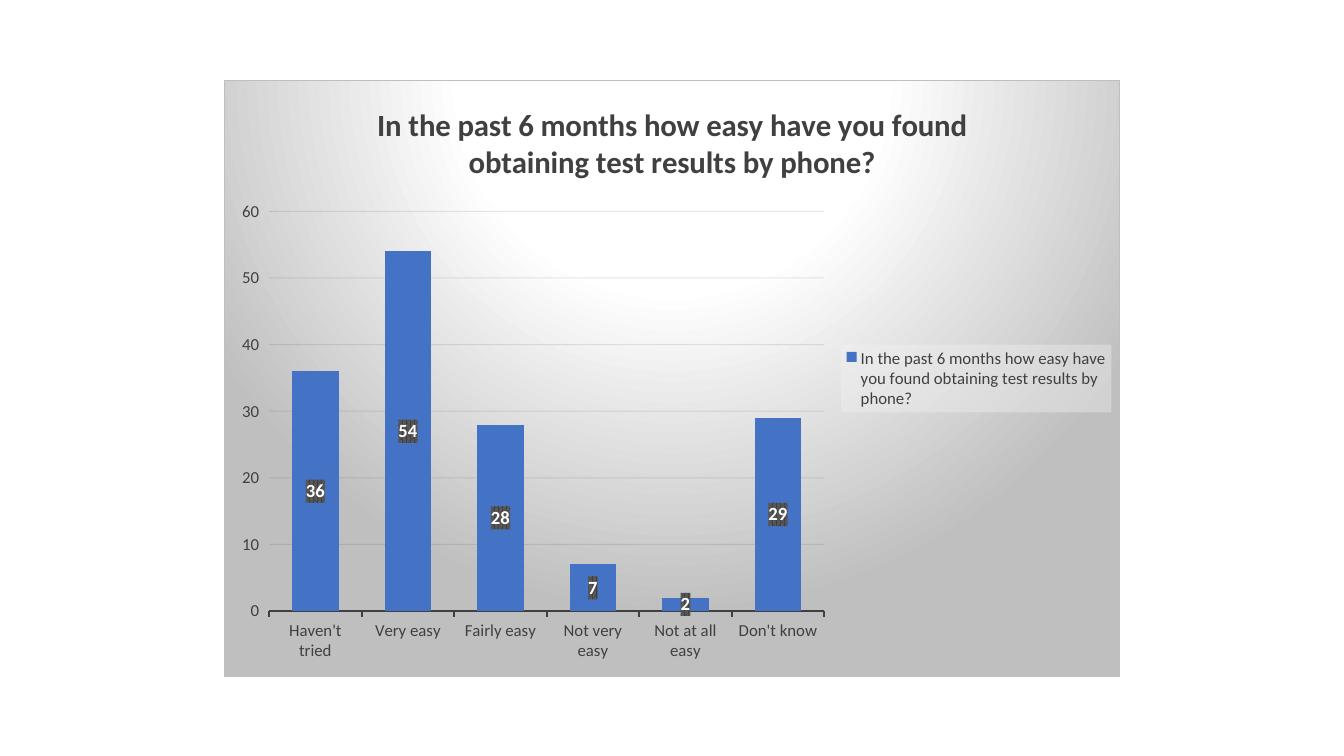
from typing import NamedTuple

from pptx import Presentation
from pptx.chart.axis import CategoryAxis, ValueAxis
from pptx.chart.chart import Chart
from pptx.chart.data import CategoryChartData
from pptx.dml.color import RGBColor
from pptx.enum.chart import XL_CHART_TYPE, XL_LABEL_POSITION, XL_LEGEND_POSITION, XL_TICK_MARK
from pptx.oxml import parse_xml
from pptx.oxml.ns import nsdecls
from pptx.text.text import Font
from pptx.util import Inches, Pt

COLORS = {
    "bar": "4472C4", "text": "404040", "label": "FFFFFF", "grid": "0D0D0D",
    "edge": "BFBFBF", "center": "FFFFFF", "stripe": "595959", "legend": "F2F2F2",
}
QUESTION = "In the past 6 months how easy have you found obtaining test results by phone?"


class Answer(NamedTuple):
    text: str
    count: int


ANSWERS = [
    Answer("Haven't tried", 36), Answer("Very easy", 54), Answer("Fairly easy", 28),
    Answer("Not very easy", 7), Answer("Not at all easy", 2), Answer("Don't know", 29),
]


def rgb(name: str) -> RGBColor:
    return RGBColor.from_string(COLORS[name])


def style_font(font: Font, size: float, color: str = "text", bold: bool = False) -> None:
    font.name, font.size, font.bold = "Calibri", Pt(size), bold
    font.color.rgb = rgb(color)


def color_xml(name: str, alpha: int = 100) -> str:
    return f'<a:srgbClr val="{COLORS[name]}"><a:alpha val="{alpha * 1000}"/></a:srgbClr>'


def shape_props(content: str):
    return parse_xml(f'<c:spPr {nsdecls("c", "a")}>{content}</c:spPr>')


def style_axis(axis: CategoryAxis | ValueAxis) -> None:
    style_font(axis.tick_labels.font, 12)
    axis.major_tick_mark = XL_TICK_MARK.OUTSIDE
    axis.minor_tick_mark = XL_TICK_MARK.NONE


def style_axes(chart: Chart) -> None:
    cat_axis, val_axis = chart.category_axis, chart.value_axis
    style_axis(cat_axis)
    cat_axis.format.line.color.rgb = rgb("text")
    cat_axis.format.line.width = Pt(1.5)
    style_axis(val_axis)
    val_axis.minimum_scale, val_axis.maximum_scale, val_axis.major_unit = 0, 60, 10
    val_axis.format.line.fill.background()
    grid = val_axis.major_gridlines.format.line
    grid.width = Pt(0.75)
    grid.color.rgb = rgb("grid")
    for clr in chart.element.xpath(".//c:majorGridlines//a:srgbClr"):
        clr.append(parse_xml(f'<a:alpha {nsdecls("a")} val="10000"/>'))


def style_bars(chart: Chart) -> None:
    plot = chart.plots[0]
    plot.gap_width = 100
    plot.vary_by_categories = False
    bars = plot.series[0]
    bars.format.fill.solid()
    bars.format.fill.fore_color.rgb = rgb("bar")
    labels = bars.data_labels
    labels.show_value = True
    labels.position = XL_LABEL_POSITION.CENTER
    style_font(labels.font, 13.3, "label", True)
    chart.element.xpath(".//c:ser/c:dLbls/c:txPr")[0].addprevious(shape_props(
        f'<a:pattFill prst="pct75"><a:fgClr>{color_xml("text")}</a:fgClr>'
        f'<a:bgClr>{color_xml("stripe")}</a:bgClr></a:pattFill>'))


def style_legend(chart: Chart) -> None:
    chart.has_legend = True
    chart.legend.position = XL_LEGEND_POSITION.RIGHT
    chart.legend.include_in_layout = False
    style_font(chart.legend.font, 12)
    chart.element.xpath(".//c:legend/c:overlay")[0].addnext(shape_props(
        f'<a:solidFill>{color_xml("legend", 39)}</a:solidFill>'))


def style_background(chart: Chart) -> None:
    """Fill the chart area with a radial gradient centred above its top edge."""
    stops = "".join(f'<a:gs pos="{pos * 1000}">{color_xml(name)}</a:gs>'
                    for pos, name in [(0, "center"), (39, "center"), (100, "edge")])
    chart.element.chart.addnext(shape_props(
        f'<a:gradFill><a:gsLst>{stops}</a:gsLst><a:path path="circle">'
        '<a:fillToRect l="50000" t="-80000" r="50000" b="180000"/></a:path></a:gradFill>'
        f'<a:ln w="{Pt(0.75)}"><a:solidFill>{color_xml("edge")}</a:solidFill></a:ln>'))


def place_plot(chart: Chart, x: float, y: float, w: float, h: float) -> None:
    """Set the inner plot area in fractions of the chart size."""
    plot_area = chart.element.chart.plotArea
    for old in plot_area.xpath("c:layout"):
        plot_area.remove(old)
    sizes = "".join(f'<c:{tag} val="{val}"/>' for tag, val in zip("xywh", (x, y, w, h)))
    plot_area.insert(0, parse_xml(
        f'<c:layout {nsdecls("c")}><c:manualLayout><c:layoutTarget val="inner"/>'
        f'<c:xMode val="edge"/><c:yMode val="edge"/>{sizes}</c:manualLayout></c:layout>'))


def main() -> None:
    prs = Presentation()
    prs.slide_width, prs.slide_height = Inches(13.33), Inches(7.5)
    slide = prs.slides.add_slide(prs.slide_layouts[6])

    data = CategoryChartData()
    data.categories = [answer.text for answer in ANSWERS]
    data.add_series(QUESTION, [answer.count for answer in ANSWERS])
    chart = slide.shapes.add_chart(
        XL_CHART_TYPE.COLUMN_CLUSTERED,
        Inches(2.22), Inches(0.79), Inches(8.89), Inches(5.93), data).chart
    chart.font.name, chart.font.size = "Calibri", Pt(10)

    chart.has_title = True
    tf = chart.chart_title.text_frame
    tf.text = QUESTION
    style_font(tf.paragraphs[0].runs[0].font, 22, bold=True)
    chart.chart_title.include_in_layout = False

    style_axes(chart)
    style_bars(chart)
    style_legend(chart)
    style_background(chart)
    place_plot(chart, 0.05, 0.22, 0.62, 0.67)
    prs.save("out.pptx")


if __name__ == "__main__":
    main()
